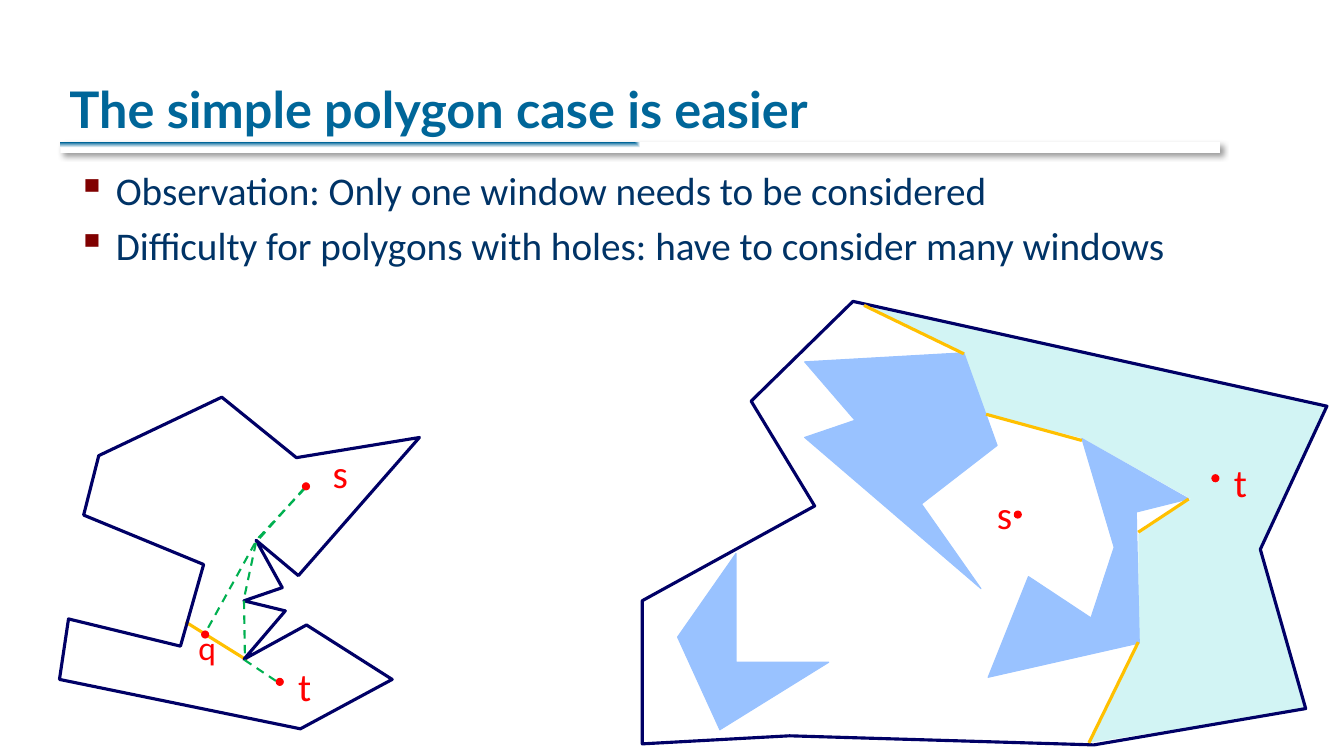
from collections import namedtuple

from lxml import etree
from pptx import Presentation
from pptx.dml.color import RGBColor
from pptx.enum.dml import MSO_LINE
from pptx.enum.shapes import MSO_CONNECTOR, MSO_SHAPE
from pptx.enum.text import MSO_ANCHOR
from pptx.oxml import parse_xml
from pptx.oxml.ns import nsdecls, qn
from pptx.util import Emu, Pt

DASH = MSO_LINE.DASH
STRAIGHT = MSO_CONNECTOR.STRAIGHT
OVAL = MSO_SHAPE.OVAL
RECTANGLE = MSO_SHAPE.RECTANGLE
BOTTOM = MSO_ANCHOR.BOTTOM
TOP = MSO_ANCHOR.TOP

PX = 9144
DOT = 7
NAVY, GOLD, GREEN, RED = "000066", "FFC000", "00B050", "FF0000"
TEAL, SLATE, MAROON = "006699", "003366", "800000"
HOLE, HIDDEN = "99C2FF", "D2F4F4"

Box = namedtuple("Box", "left top width height")


def px(length):
    """Turn whole px into EMU."""
    return Emu(length * PX)


def color(value):
    """Turn a hex string into a colour."""
    return RGBColor.from_string(value)


def paint(shape, fill=None, line=None, weight=0.75, dash=None):
    """Set the fill and line of a shape and drop its shadow."""
    shape.shadow.inherit = False
    if fill:
        shape.fill.solid()
        shape.fill.fore_color.rgb = color(fill)
    else:
        shape.fill.background()
    if line:
        shape.line.color.rgb = color(line)
        shape.line.width = Pt(weight)
        shape.line.dash_style = dash
    else:
        shape.line.fill.background()


def add_path(page, box, points, closed=True, **style):
    """Draw a path through points given from the corner of the box."""
    placed = [(box.left + x, box.top + y) for x, y in points]
    builder = page.shapes.build_freeform(*placed[0], scale=PX)
    builder.add_line_segments(placed[1:], close=closed)
    paint(builder.convert_to_shape(), **style)


def add_window(page, box, start, end):
    """Draw one window as a straight golden line."""
    ends = [px(corner + offset) for point in (start, end)
            for corner, offset in zip((box.left, box.top), point)]
    window = page.shapes.add_connector(STRAIGHT, *ends)
    window.line.color.rgb = color(GOLD)
    window.line.width = Pt(2.25)
    etree.SubElement(window._element.spPr, qn("a:effectLst"))


def add_text_frame(page, box, anchor=TOP):
    """Add a wrapping text box and return its frame."""
    frame = page.shapes.add_textbox(*map(px, box)).text_frame
    frame.word_wrap = True
    frame.vertical_anchor = anchor
    return frame


def add_span(para, text, size, ink, font="Calibri", bold=False):
    """Add one formatted run to a paragraph."""
    span = para.add_run()
    span.text = text
    span.font.name = font
    span.font.size = Pt(size)
    span.font.bold = bold
    span.font.color.rgb = color(ink)


def add_site(page, box, name, dot, label, size=28):
    """Draw a named point as a red dot with its letter."""
    mark = page.shapes.add_shape(OVAL, px(box.left + dot[0]), px(box.top + dot[1]), px(DOT), px(DOT))
    paint(mark, fill=RED, line=RED)
    letter = Box(box.left + label[0], box.top + label[1], 27, 2 * size)
    add_span(add_text_frame(page, letter).paragraphs[0], name, size, RED)


def add_title(page, box, text):
    """Write the title and the shadowed rule under it."""
    rule = page.shapes.add_shape(RECTANGLE, px(box.left + 1), px(box.top + box.height - 1), px(1150), px(11))
    paint(rule)
    properties = rule._element.spPr
    properties.replace(properties.find(qn("a:noFill")), parse_xml(
        f'<a:gradFill {nsdecls("a")} rotWithShape="0"><a:gsLst>'
        f'<a:gs pos="0"><a:srgbClr val="{TEAL}"/></a:gs>'
        '<a:gs pos="100000"><a:srgbClr val="FFFFFF"/></a:gs></a:gsLst>'
        '<a:path path="rect"><a:fillToRect r="100000" b="100000"/></a:path></a:gradFill>'))
    properties.find(qn("a:effectLst")).append(parse_xml(
        f'<a:outerShdw {nsdecls("a")} blurRad="50800" dist="38100" dir="2700000" algn="tl" rotWithShape="0">'
        '<a:srgbClr val="000000"><a:alpha val="40000"/></a:srgbClr></a:outerShdw>'))
    para = add_text_frame(page, box, BOTTOM).paragraphs[0]
    add_span(para, text, 36, TEAL, "Lato", True)


def add_bullets(page, box, lines):
    """Write the lines as a list with square bullets."""
    frame = add_text_frame(page, box)
    for index, line in enumerate(lines):
        para = frame.add_paragraph() if index else frame.paragraphs[0]
        para.space_before = Pt(5.6)
        properties = para._p.get_or_add_pPr()
        properties.set("marL", str(px(38)))
        properties.set("indent", str(-px(38)))
        bullet_color = etree.SubElement(properties, qn("a:buClr"))
        etree.SubElement(bullet_color, qn("a:srgbClr"), val=MAROON)
        etree.SubElement(properties, qn("a:buChar"), char="▪")
        add_span(para, line, 28, SLATE)


def add_simple_polygon(page, box):
    """Draw the polygon without holes, its window and its paths."""
    add_window(page, box, (186, 261), (125, 223))
    add_path(page, box, [
        (0, 280), (9, 220), (120, 247), (143, 166), (24, 117), (39, 58),
        (161, 0), (235, 60), (357, 40), (237, 177), (195, 142), (221, 189),
        (183, 202), (224, 212), (183, 260), (245, 226), (330, 280), (239, 329),
    ], line=NAVY, weight=2.25)
    routes = [
        [(243, 90), (195, 144), (183, 200), (184, 261), (220, 285)],
        [(243, 91), (196, 141), (144, 235)],
    ]
    for route in routes:
        add_path(page, box, route, closed=False, line=GREEN, weight=1.5, dash=DASH)
    add_site(page, box, "s", (241, 85), (261, 47))
    add_site(page, box, "t", (215, 279), (227, 258))
    add_site(page, box, "q", (141, 232), (128, 223), 24)


def add_holed_polygon(page, box):
    """Draw the polygon with holes, its hidden part and its windows."""
    add_path(page, box, [
        (442, 439), (659, 406), (613, 247), (680, 104), (211, 0), (318, 53),
        (341, 113), (437, 137), (544, 197), (492, 232), (492, 340),
    ], fill=HIDDEN)
    add_path(page, box, [
        (108, 100), (209, 1), (679, 105), (613, 247), (658, 405),
        (448, 441), (146, 432), (0, 440), (0, 298), (171, 204),
    ], line=NAVY, weight=2.25)
    holes = [
        [(436, 137), (468, 245), (445, 315), (383, 274), (343, 374), (493, 340), (490, 210), (542, 197)],
        [(319, 52), (161, 61), (211, 119), (161, 136), (336, 286), (277, 202), (352, 144)],
        [(93, 251), (35, 334), (77, 426), (185, 359), (93, 359)],
    ]
    for hole in holes:
        add_path(page, box, hole, fill=HOLE, line=HOLE)
    windows = [
        ((436, 139), (341, 113)), ((319, 53), (220, 5)),
        ((443, 439), (492, 339)), ((492, 230), (542, 197)),
    ]
    for start, end in windows:
        add_window(page, box, start, end)
    add_site(page, box, "s", (369, 209), (342, 184))
    add_site(page, box, "t", (565, 173), (577, 152))


def main():
    """Build the slide and save it."""
    deck = Presentation()
    deck.slide_width, deck.slide_height = px(1333), px(750)
    page = deck.slides.add_slide(deck.slide_layouts[6])
    add_title(page, Box(59, 17, 1133, 125), "The simple polygon case is easier")
    add_bullets(page, Box(67, 160, 1182, 115), [
        "Observation: Only one window needs to be considered",
        "Difficulty for polygons with holes: have to consider many windows",
    ])
    add_simple_polygon(page, Box(59, 394, 357, 329))
    add_holed_polygon(page, Box(637, 298, 680, 441))
    deck.save("out.pptx")


if __name__ == "__main__":
    main()
